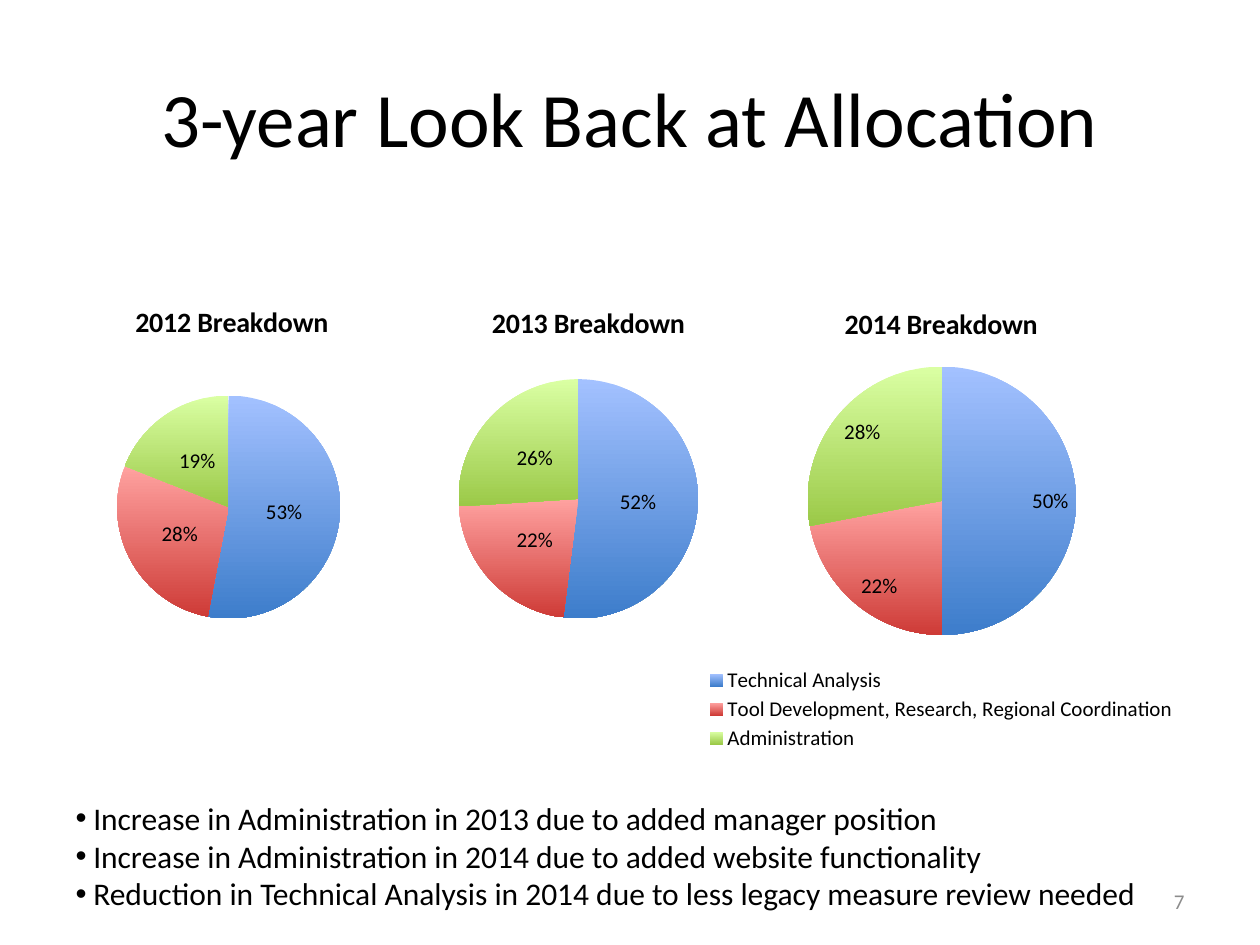
"""Build a slide that compares three yearly allocation pies."""
from dataclasses import dataclass

from pptx import Presentation
from pptx.chart.chart import Chart
from pptx.chart.data import CategoryChartData
from pptx.dml.color import RGBColor
from pptx.enum.chart import XL_CHART_TYPE, XL_LABEL_POSITION, XL_LEGEND_POSITION
from pptx.enum.text import MSO_ANCHOR, MSO_AUTO_SIZE, PP_ALIGN
from pptx.oxml import parse_xml
from pptx.oxml.ns import nsdecls, qn
from pptx.util import Inches, Pt

PIE = XL_CHART_TYPE.PIE
LABEL_CENTER = XL_LABEL_POSITION.CENTER
LABEL_INSIDE_END = XL_LABEL_POSITION.INSIDE_END
LEGEND_BOTTOM = XL_LEGEND_POSITION.BOTTOM
CENTER, RIGHT = PP_ALIGN.CENTER, PP_ALIGN.RIGHT
MIDDLE = MSO_ANCHOR.MIDDLE
NO_FIT = MSO_AUTO_SIZE.NONE

FONT = "Calibri"
BLACK = RGBColor(0x00, 0x00, 0x00)
GRAY = RGBColor(0x8C, 0x8C, 0x8C)
SLICE_GRADIENTS = (
    (RGBColor(0xA3, 0xC1, 0xFF), RGBColor(0x3D, 0x7D, 0xCB)),
    (RGBColor(0xFF, 0xA2, 0xA0), RGBColor(0xCE, 0x3B, 0x37)),
    (RGBColor(0xDA, 0xFF, 0xA3), RGBColor(0x9B, 0xC9, 0x48)),
)
ACTIVITIES = (
    "Technical Analysis",
    "Tool Development, Research, Regional Coordination",
    "Administration",
)
NUMBERS = ("1", "2", "3")
REMARKS = (
    "Increase in Administration in 2013 due to added manager position",
    "Increase in Administration in 2014 due to added website functionality",
    "Reduction in Technical Analysis in 2014 due to less legacy measure review needed",
)


@dataclass(frozen=True)
class Area:
    left: float
    top: float
    width: float
    height: float

    def lengths(self) -> tuple:
        return tuple(Inches(v) for v in (self.left, self.top, self.width, self.height))


@dataclass(frozen=True)
class YearPie:
    year: int
    frame: Area
    circle: Area
    shares: tuple
    categories: tuple = NUMBERS
    label_position: XL_LABEL_POSITION = LABEL_CENTER
    legend: Area | None = None


PIES = (
    YearPie(2013, Area(3.31, 2.26, 2.72, 2.88), Area(3.64, 3.01, 1.9, 1.9),
            (0.52, 0.22, 0.26)),
    YearPie(2012, Area(0.5, 2.25, 2.68, 2.88), Area(0.93, 3.14, 1.77, 1.77),
            (0.53, 0.28, 0.19)),
    YearPie(2014, Area(5.27, 2.25, 4.4, 3.76), Area(6.41, 2.91, 2.13, 2.13),
            (0.5, 0.22, 0.28), ACTIVITIES, LABEL_INSIDE_END,
            Area(5.57, 5.27, 3.8, 0.72)),
)


def style_font(font, size: float, color: RGBColor = BLACK, bold: bool = False) -> None:
    font.name, font.size, font.bold = FONT, Pt(size), bold
    font.color.rgb = color


def add_span(para, text: str, size: float, color: RGBColor = BLACK) -> None:
    span = para.add_run()
    span.text = text
    style_font(span.font, size, color)


def place(shape, area: Area) -> None:
    shape.left, shape.top, shape.width, shape.height = area.lengths()


def set_layout(element, index: int, area: Area, frame: Area, target: str = "") -> None:
    fractions = {
        "x": (area.left - frame.left) / frame.width,
        "y": (area.top - frame.top) / frame.height,
        "w": area.width / frame.width,
        "h": area.height / frame.height,
    }
    modes = '<c:xMode val="edge"/><c:yMode val="edge"/>'
    sizes = "".join(f'<c:{k} val="{v:.4f}"/>' for k, v in fractions.items())
    layout = parse_xml(
        f'<c:layout {nsdecls("c")}><c:manualLayout>{target}{modes}{sizes}'
        "</c:manualLayout></c:layout>"
    )
    previous = element.find(qn("c:layout"))
    if previous is not None:
        element.remove(previous)
    element.insert(index, layout)


def add_legend(chart: Chart, area: Area, frame: Area) -> None:
    chart.has_legend = True
    legend = chart.legend
    legend.position = LEGEND_BOTTOM
    legend.include_in_layout = False
    style_font(legend.font, 12)
    set_layout(chart._chartSpace.chart.find(qn("c:legend")), 1, area, frame)


def add_pie(page, pie: YearPie) -> None:
    name = f"{pie.year} Breakdown"
    data = CategoryChartData(number_format="0%")
    data.categories = pie.categories
    data.add_series(name, pie.shares)
    chart = page.shapes.add_chart(PIE, *pie.frame.lengths(), data).chart
    style_font(chart.font, 12)

    chart.has_title = True
    title_span = chart.chart_title.text_frame.paragraphs[0].add_run()
    title_span.text = name
    style_font(title_span.font, 16, bold=True)

    plot = chart.plots[0]
    plot.vary_by_categories = True
    plot.has_data_labels = True
    labels = plot.data_labels
    labels.show_value, labels.show_percentage = True, False
    labels.number_format, labels.number_format_is_linked = "0%", False
    labels.position = pie.label_position
    style_font(labels.font, 12)
    for index, colors in enumerate(SLICE_GRADIENTS):
        fill = plot.series[0].points[index].format.fill
        fill.gradient()
        fill.gradient_angle = 270
        for stop, color in zip(fill.gradient_stops, colors):
            stop.color.rgb = color

    chart.has_legend = False
    set_layout(chart._chartSpace.chart.plotArea, 0, pie.circle, pie.frame,
               '<c:layoutTarget val="inner"/>')
    if pie.legend:
        add_legend(chart, pie.legend, pie.frame)


def add_remarks(box) -> None:
    place(box, Area(0.5, 6.29, 9, 1.01))
    frame = box.text_frame
    frame.auto_size = NO_FIT
    for index, remark in enumerate(REMARKS):
        para = frame.add_paragraph() if index else frame.paragraphs[0]
        para.space_before = Pt(0)
        properties = para._p.get_or_add_pPr()
        properties.set("marL", str(Inches(0.14)))
        properties.set("indent", str(-Inches(0.14)))
        add_span(para, remark, 18)


def add_page_number(page, number: str) -> None:
    box = page.shapes.add_textbox(*Area(7.17, 6.95, 2.33, 0.4).lengths())
    frame = box.text_frame
    frame.word_wrap = True
    frame.vertical_anchor = MIDDLE
    para = frame.paragraphs[0]
    para.alignment = RIGHT
    add_span(para, number, 12, GRAY)


def main() -> None:
    deck = Presentation()
    deck.slide_width, deck.slide_height = Inches(10), Inches(7.5)
    page = deck.slides.add_slide(deck.slide_layouts[1])
    title = page.shapes.title
    place(title, Area(0.5, 0.3, 9, 1.25))
    title.text_frame.vertical_anchor = MIDDLE
    title_para = title.text_frame.paragraphs[0]
    title_para.alignment = CENTER
    add_span(title_para, "3-year Look Back at Allocation", 44)
    for pie in PIES:
        add_pie(page, pie)
    add_remarks(page.placeholders[1])
    add_page_number(page, "7")
    deck.save("out.pptx")


if __name__ == "__main__":
    main()
